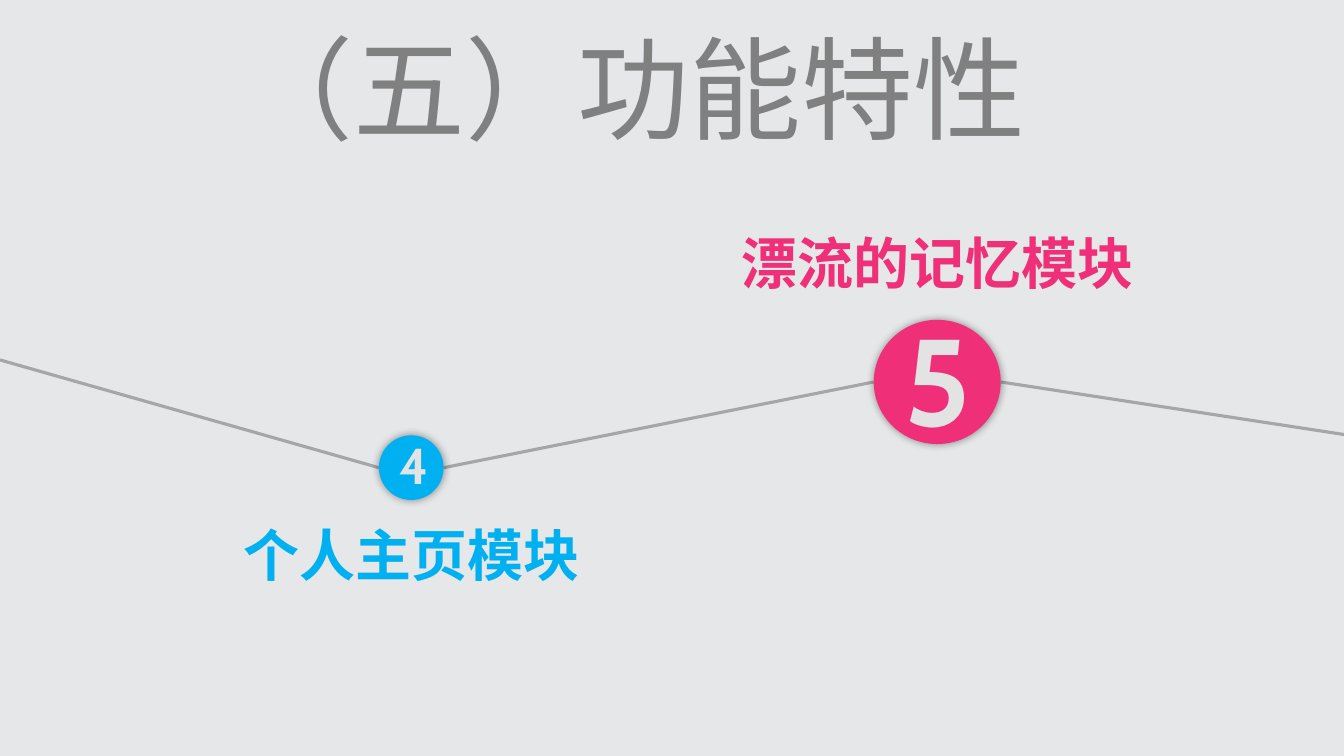
from lxml import etree
from pptx import Presentation
from pptx import util as u
from pptx.dml.color import RGBColor
from pptx.enum import shapes, text
from pptx.oxml import parse_xml
from pptx.oxml.ns import nsdecls, qn

GREY, PALE, PINK, BLUE = "808080", "E3E3E3", "EF3078", "00B0F0"


def rgb(value):
    """Turn a hex string into a colour."""
    return RGBColor.from_string(value)


def shadow(blur, alpha, dist=0):
    """Return an effect list with a soft black shadow, in points and percent."""
    return parse_xml(
        f'<a:effectLst {nsdecls("a")}><a:outerShdw blurRad="{u.Pt(blur)}" '
        f'dist="{u.Pt(dist)}" dir="2700000" algn="ctr" rotWithShape="0">'
        f'<a:srgbClr val="000000"><a:alpha val="{alpha * 1000}"/></a:srgbClr>'
        '</a:outerShdw></a:effectLst>')


def add_text(s, words, box, size, color, bold=True):
    """Write one centred line in a box given in centimetres."""
    sp = s.shapes.add_textbox(*map(u.Cm, box))
    tf = sp.text_frame
    tf.auto_size = text.MSO_AUTO_SIZE.SHAPE_TO_FIT_TEXT
    p = tf.paragraphs[0]
    p.text = words
    p.alignment = text.PP_ALIGN.CENTER
    p.font.name, p.font.size, p.font.bold = "Cabin", u.Pt(size), bold
    p.font.color.rgb = rgb(color)
    return p.runs[0]


def add_title(s, box):
    """Write the heading of the slide."""
    add_text(s, "（五）功能特性", box, 80, GREY, bold=False)


def add_path(s, points):
    """Join each pair of points with a grey line."""
    for start, end in points:
        c = s.shapes.add_connector(
            shapes.MSO_CONNECTOR.STRAIGHT, *map(u.Cm, start + end))
        c.line.color.rgb, c.line.width = rgb("A6A6A6"), u.Pt(2.25)
        etree.SubElement(c._element.spPr, qn("a:effectLst"))


def add_stop(s, box, number, size, label, label_dy, label_width, color):
    """Draw a numbered circle in its box, with a label above or below it."""
    x, y, w, h = box
    cx, cy = x + w / 2, y + h / 2
    sp = s.shapes.add_shape(shapes.MSO_SHAPE.OVAL, *map(u.Cm, box))
    sp.fill.solid()
    sp.fill.fore_color.rgb = rgb(color)
    sp.line.fill.background()
    sp._element.spPr.append(shadow(6, 40))
    tw, th = size * 0.031, size * 0.043 + 0.25
    r = add_text(s, number, (cx - tw / 2, cy - 0.08 - th / 2, tw, th), size, PALE)
    r._r.get_or_add_rPr().insert(0, shadow(4, 40, 3))
    add_text(s, label, (cx - label_width / 2, cy + label_dy, label_width, 1.96),
             40, color)


def main():
    """Build the slide and save it."""
    prs = Presentation()
    prs.slide_width, prs.slide_height = u.Cm(33.87), u.Cm(19.05)
    s = prs.slides.add_slide(prs.slide_layouts[6])
    s.background.fill.solid()
    s.background.fill.fore_color.rgb = rgb("E6E7E9")
    four, five = (9.55, 10.97, 1.63, 1.63), (22.02, 8.06, 3.2, 3.13)
    (l4, r4), (l5, r5) = [((x, y + h / 2), (x + w, y + h / 2))
                          for x, y, w, h in (four, five)]
    add_path(s, [((0, 9.07), l4), (r4, l5), (r5, (33.87, 10.95))])
    add_stop(s, five, "5", 88, "漂流的记忆模块", -3.98, 10.57, PINK)
    add_stop(s, four, "4", 36, "个人主页模块", 1.2, 9.3, BLUE)
    add_title(s, (4.9, 0.36, 22.15, 3.68))
    prs.save("out.pptx")


if __name__ == "__main__":
    main()
